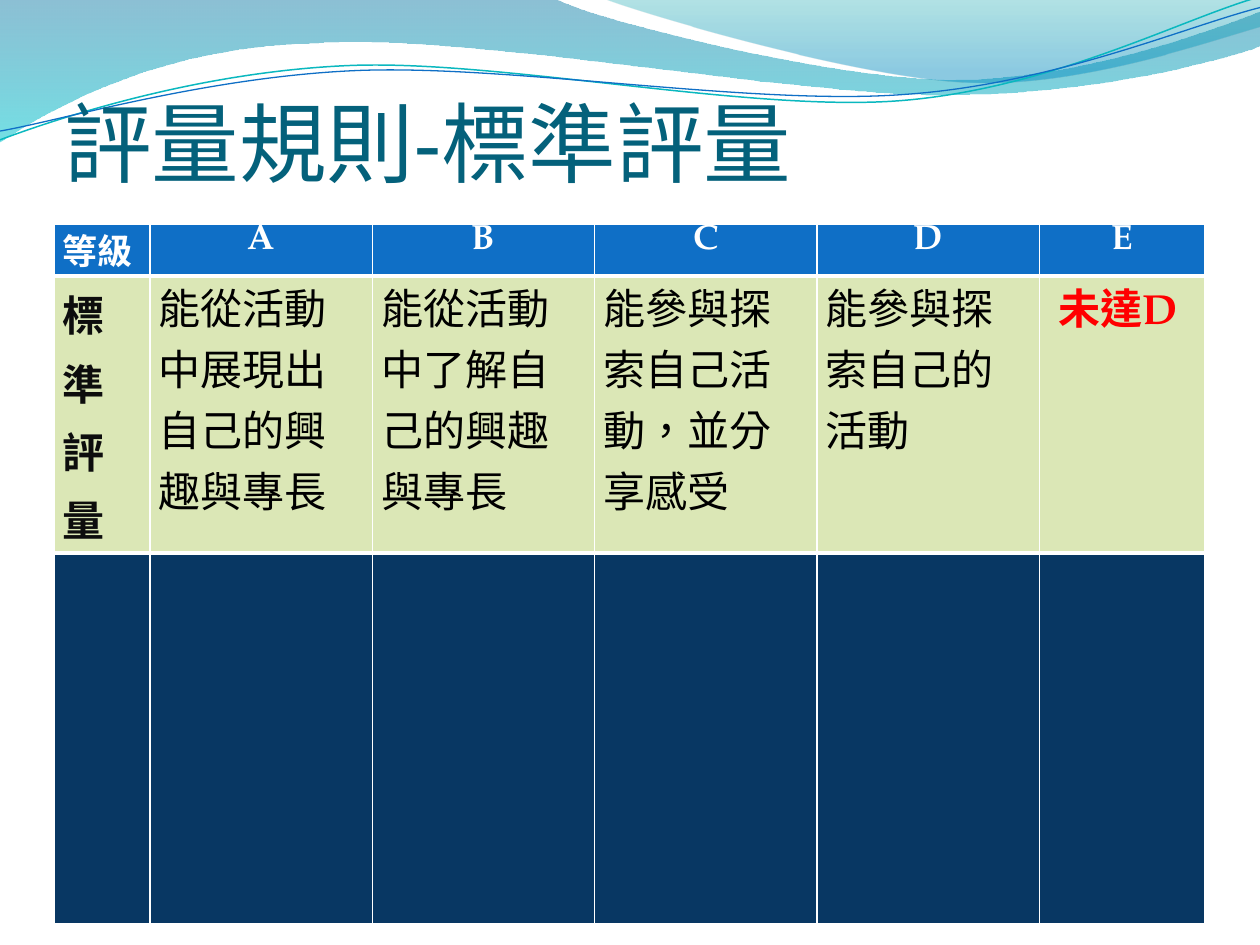
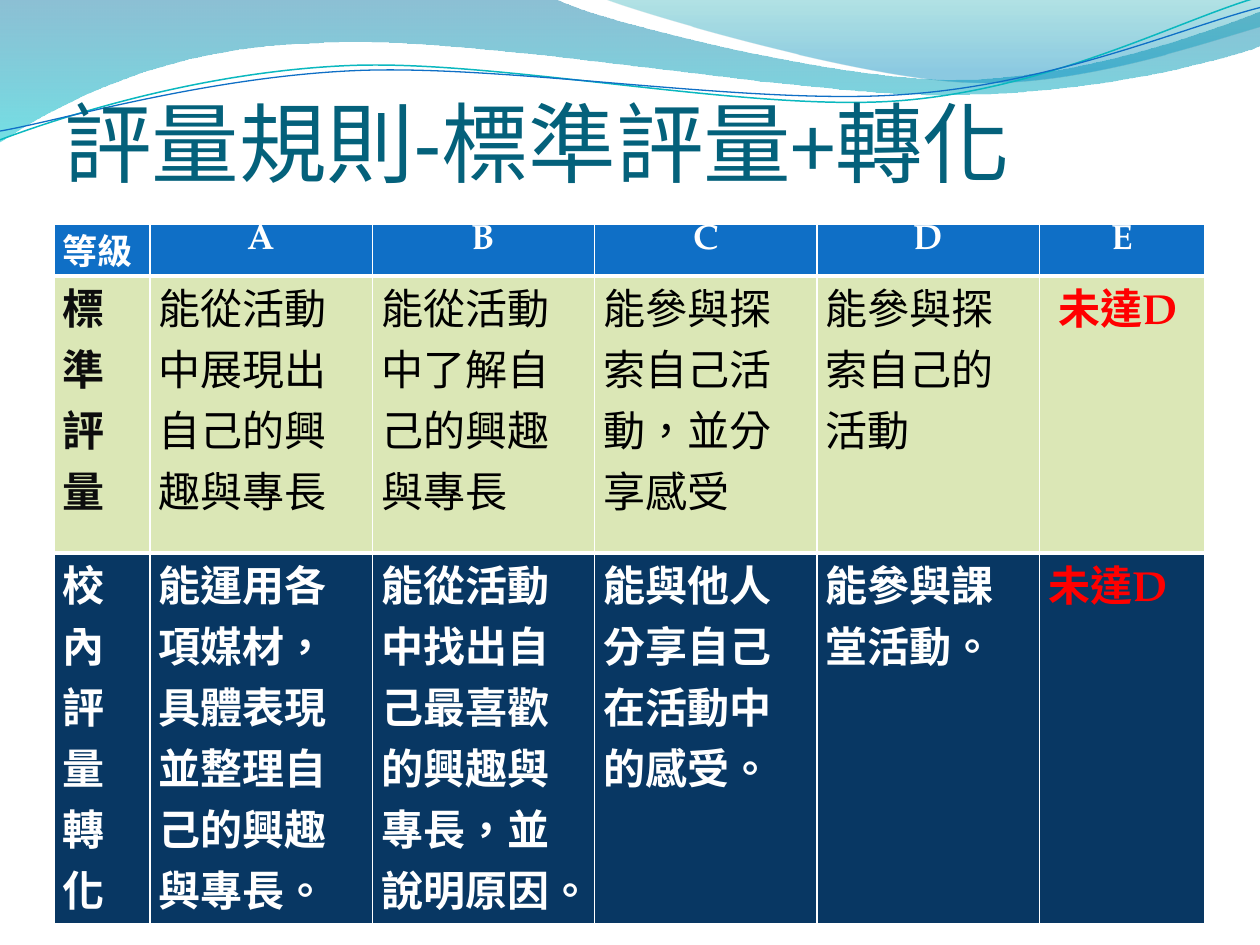
from math import cos, radians, sin

from lxml.etree import SubElement
from pptx import Presentation
from pptx.dml.color import RGBColor
from pptx.enum.text import MSO_ANCHOR, PP_ALIGN
from pptx.oxml.ns import qn
from pptx.util import Inches, Pt

COLORS = {
    "white": "FFFFFF", "black": "000000", "title": "04617B", "header": "0F6FC6",
    "standard": "DBE7B6", "school": "083763", "label": "0D0D0D", "fail": "FF0000",
    "teal": "0AB8BF", "deep": "0074A1", "aqua": "00C6CF", "sea": "00A1A9", "sky": "008BBF",
}
TITLE_FONT, BODY_FONT = "Calibri", "TeX Gyre Pagella"

# Wave outlines: a pair is a line end, six numbers are a cubic curve
BIG_WAVE = [(0, 0), (4.4, -0.01), (4.76, 0.17, 6.64, 0.63, 7.58, 0.63),
            (8.53, 0.63, 9.58, 0.26, 10, 0.09), (10.01, 0.36),
            (9.83, 0.44, 8.7, 0.76, 7.46, 0.75), (6.22, 0.75, 3.82, 0.28, 2.57, 0.34),
            (1.29, 0.36, 0.46, 0.83, -0.01, 1.13), (0, 0)]
SMALL_WAVE = [(4.79, -0.01), (5.09, 0.11, 6.82, 0.62, 7.69, 0.65),
              (8.56, 0.69, 9.61, 0.32, 10, 0.21), (10, 0), (4.79, -0.01)]
TEAL_LINE = [(0, 1.11), (0.48, 0.93, 1.58, 0.57, 2.77, 0.52),
             (3.95, 0.47, 5.93, 0.89, 7.13, 0.8), (8.33, 0.71, 9.38, 0.15, 9.98, -0.02)]
BLUE_LINE = [(0, 1.04), (0.47, 0.96, 1.64, 0.61, 2.83, 0.56),
             (4.03, 0.51, 5.97, 0.84, 7.17, 0.75), (8.36, 0.67, 9.41, 0.21, 10, 0.06)]
LINE_TILT = -2.7
LINE_CENTER = (4.99, 0.58)

# Table layout and wording
TITLE_BOX = (0.51, 0.29, 9, 1.25)
TABLE_AT = (0.43, 1.78)
TABLE_WIDTH, LABEL_WIDTH, FAIL_WIDTH = 9.13, 0.76, 1.31
GRADE_WIDTH = (TABLE_WIDTH - LABEL_WIDTH - FAIL_WIDTH) / 4
COL_WIDTHS = [LABEL_WIDTH] + [GRADE_WIDTH] * 4 + [FAIL_WIDTH]
ROW_HEIGHTS = [0.41, 2.2, 2.94]
ROW_FILLS = ["header", "standard", "school"]
HEADER = ["等級", "A", "B", "C", "D", "E"]
STANDARD = ["能從活動中展現出自己的興趣與專長", "能從活動中了解自己的興趣與專長",
            "能參與探索自己活動，並分享感受", "能參與探索自己的活動", "未達D"]
SCHOOL = ["校內評量\n轉化", "能運用各項媒材，具體表現並整理自己的興趣與專長。",
          "能從活動中找出自己最喜歡的興趣與專長，並說明原因。",
          "能與他人分享自己在活動中的感受。", "能參與課堂活動。", "未達D"]
SLIDES = [
    ("評量規則-標準評量", [HEADER, ["標\n準\n評\n量"] + STANDARD, [""] * 6]),
    ("評量規則-標準評量+轉化", [HEADER, ["標準評量"] + STANDARD, SCHOOL]),
]


def rgb(name):
    return RGBColor.from_string(COLORS[name])


def add_run(p, text, color, **formats):
    r = p.add_run()
    r.text = text
    for key, value in formats.items():
        setattr(r.font, key, value)
    r.font.color.rgb = rgb(color)
    r._r.get_or_add_rPr().set("lang", "zh-TW")


def turn(point, degrees):
    """Turn a point clockwise around the middle of the thin lines."""
    a = radians(degrees)
    dx, dy = point[0] - LINE_CENTER[0], point[1] - LINE_CENTER[1]
    return (LINE_CENTER[0] + dx * cos(a) - dy * sin(a),
            LINE_CENTER[1] + dx * sin(a) + dy * cos(a))


def add_outline(s, outline, close, tilt=0):
    points = [seg[i:i + 2] for seg in outline for i in range(0, len(seg), 2)]
    if tilt:
        points = [turn(point, -tilt) for point in points]
    points = [(Inches(x), Inches(y)) for x, y in points]
    builder = s.shapes.build_freeform(*points[0])
    builder.add_line_segments(points[1:], close=close)
    sp = builder.convert_to_shape()
    sp.shadow.inherit = False
    sp.rotation = tilt
    # Join each three ends of a curve into one cubic segment
    ends = iter(list(sp._element.iter(qn("a:lnTo"))))
    for seg in outline[1:]:
        first = next(ends)
        if len(seg) == 6:
            first.tag = qn("a:cubicBezTo")
            for _ in range(2):
                other = next(ends)
                first.append(other[0])
                other.getparent().remove(other)
    return sp


def add_waves(s):
    # Translucent bands
    for outline, stops in (
        (BIG_WAVE, [(0, "deep", 45), (1, "aqua", 55)]),
        (SMALL_WAVE, [(0, "sea", 30), (0.8, "sky", 45)]),
    ):
        sp = add_outline(s, outline, True)
        sp.line.fill.background()
        sp.fill.gradient()
        sp.fill.gradient_angle = 270
        for stop, (position, color, _) in zip(sp.fill.gradient_stops, stops):
            stop.position = position
            stop.color.rgb = rgb(color)
        for clr, (_, _, opacity) in zip(sp._element.spPr.iter(qn("a:srgbClr")), stops):
            SubElement(clr, qn("a:alpha"), val=str(opacity * 1000))
    # Thin lines
    for outline, color, width in ((TEAL_LINE, "teal", 0.85), (BLUE_LINE, "header", 0.75)):
        sp = add_outline(s, outline, False, LINE_TILT)
        sp.fill.background()
        sp.line.color.rgb = rgb(color)
        sp.line.width = Pt(width)


def add_title(s, text, box):
    tf = s.shapes.add_textbox(*map(Inches, box)).text_frame
    for key, value in dict(word_wrap=True, vertical_anchor=MSO_ANCHOR.BOTTOM, margin_left=0,
                           margin_right=0, margin_top=Inches(0.05), margin_bottom=0).items():
        setattr(tf, key, value)
    add_run(tf.paragraphs[0], text, "title", size=Pt(50), name=TITLE_FONT)


def set_borders(cell, row):
    top = 1 if row == 0 else 3
    bottom = 1 if row == len(ROW_HEIGHTS) - 1 else 3
    tcPr = cell._tc.get_or_add_tcPr()
    for i, (side, width) in enumerate(zip("LRTB", (1, 1, top, bottom))):
        ln = SubElement(tcPr, qn(f"a:ln{side}"), w=str(Pt(width)))
        fill = SubElement(ln, qn("a:solidFill"))
        SubElement(fill, qn("a:srgbClr"), val=COLORS["white"])
        tcPr.insert(i, ln)


def cell_color(row, col):
    if row and col == 5:
        return "fail"
    if row == 1:
        return "black" if col else "label"
    return "white"


def fill_cell(cell, text, row, col):
    indent = 0.08 if (row, col) == (1, 5) else 0
    for key, value in dict(margin_left=Inches(0.07 + indent), margin_right=Inches(0.07),
                           margin_top=0, margin_bottom=0).items():
        setattr(cell, key, value)
    set_borders(cell, row)
    cell.fill.solid()
    cell.fill.fore_color.rgb = rgb(ROW_FILLS[row])
    if not text:
        return
    lines = text.split("\n")
    tf = cell.text_frame
    for i, line in enumerate(lines):
        p = tf.add_paragraph() if i else tf.paragraphs[0]
        if row == 0 and col:
            p.alignment = PP_ALIGN.CENTER
        if row == 1 and len(lines) > 1:
            p.line_spacing = Pt(39)
        add_run(p, line, cell_color(row, col), size=Pt(24 if row else 20),
                name=BODY_FONT, bold=row != 1 or col in (0, 5))


def add_rubric(s, rows, at):
    size = (TABLE_WIDTH, sum(ROW_HEIGHTS))
    table = s.shapes.add_table(len(rows), len(COL_WIDTHS), *map(Inches, at + size)).table
    table.first_row = table.horz_banding = False
    for column, width in zip(table.columns, COL_WIDTHS):
        column.width = Inches(width)
    for i, (texts, height) in enumerate(zip(rows, ROW_HEIGHTS)):
        table.rows[i].height = Inches(height)
        for j, text in enumerate(texts):
            fill_cell(table.cell(i, j), text, i, j)


def add_rubric_slide(prs, title, rows):
    s = prs.slides.add_slide(prs.slide_layouts[6])
    s.background.fill.solid()
    s.background.fill.fore_color.rgb = rgb("white")
    add_waves(s)
    add_title(s, title, TITLE_BOX)
    add_rubric(s, rows, TABLE_AT)


def main():
    prs = Presentation()
    prs.slide_width, prs.slide_height = Inches(10), Inches(7.5)
    for title, rows in SLIDES:
        add_rubric_slide(prs, title, rows)
    prs.save("out.pptx")


if __name__ == "__main__":
    main()
